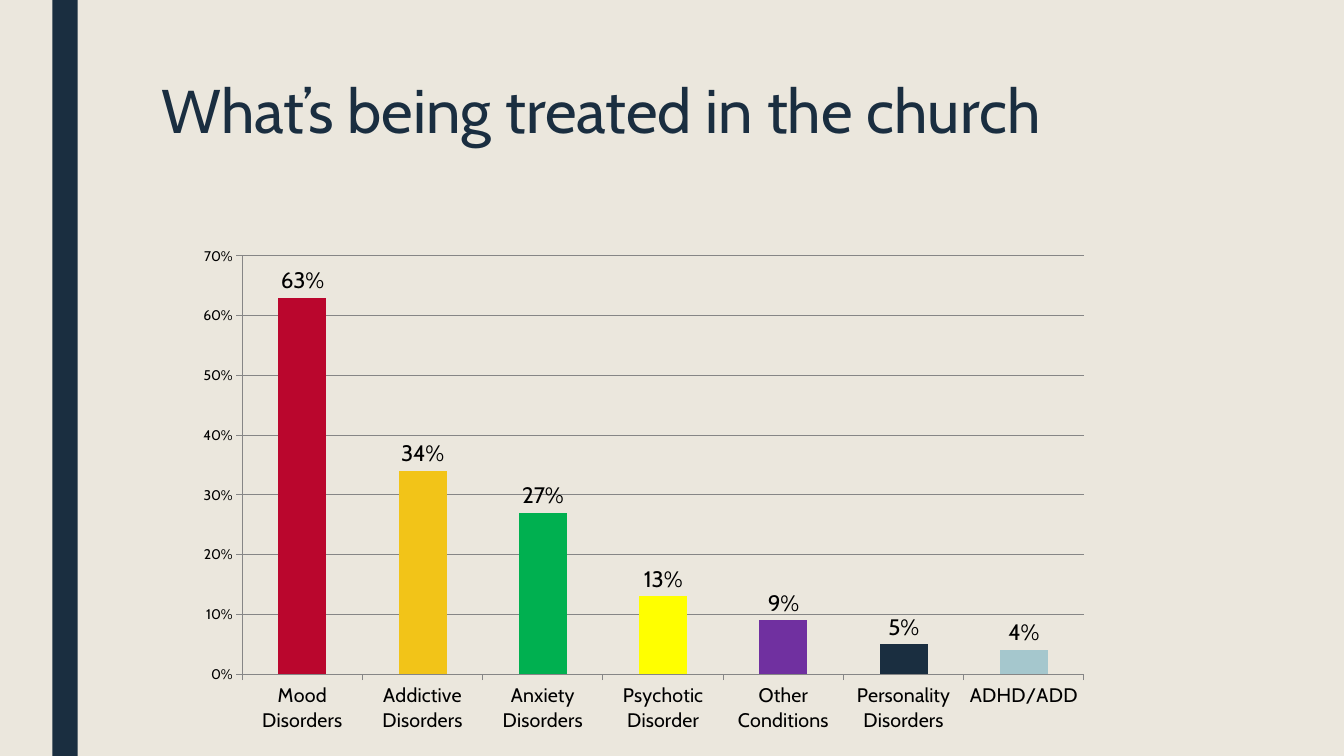
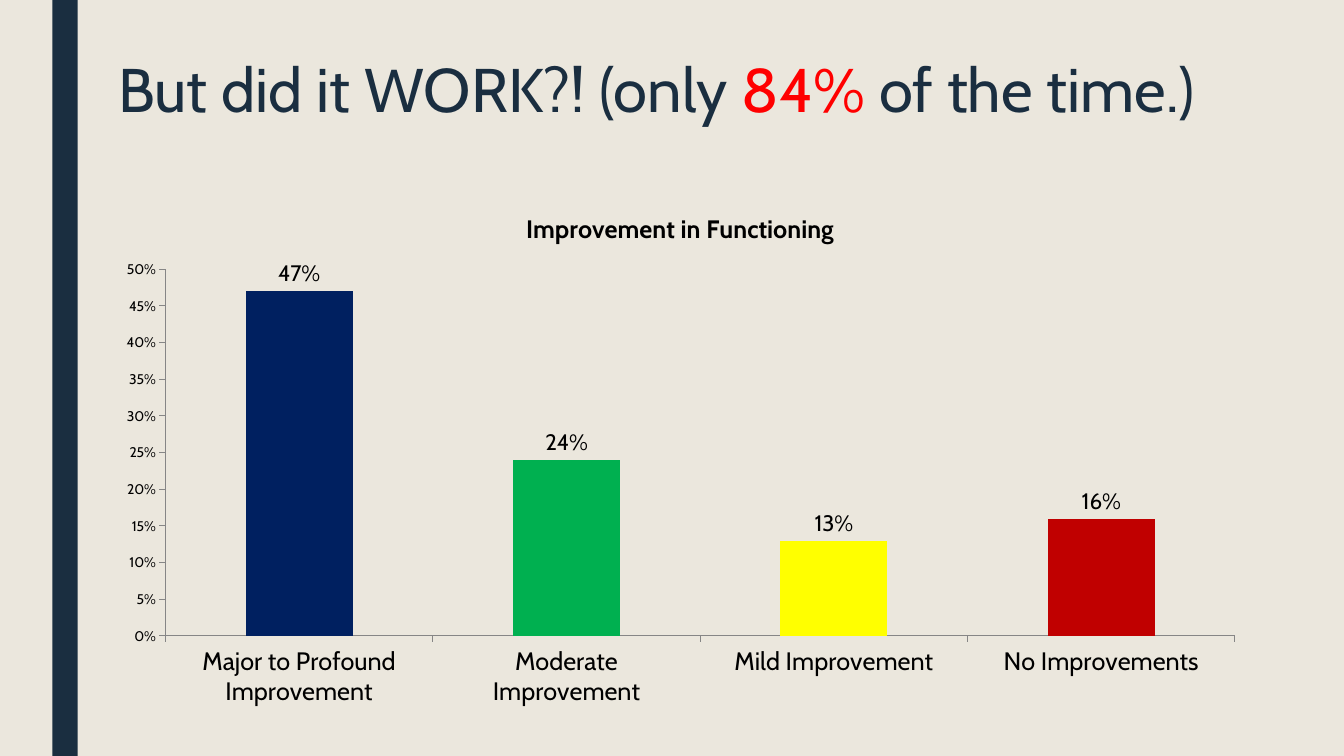
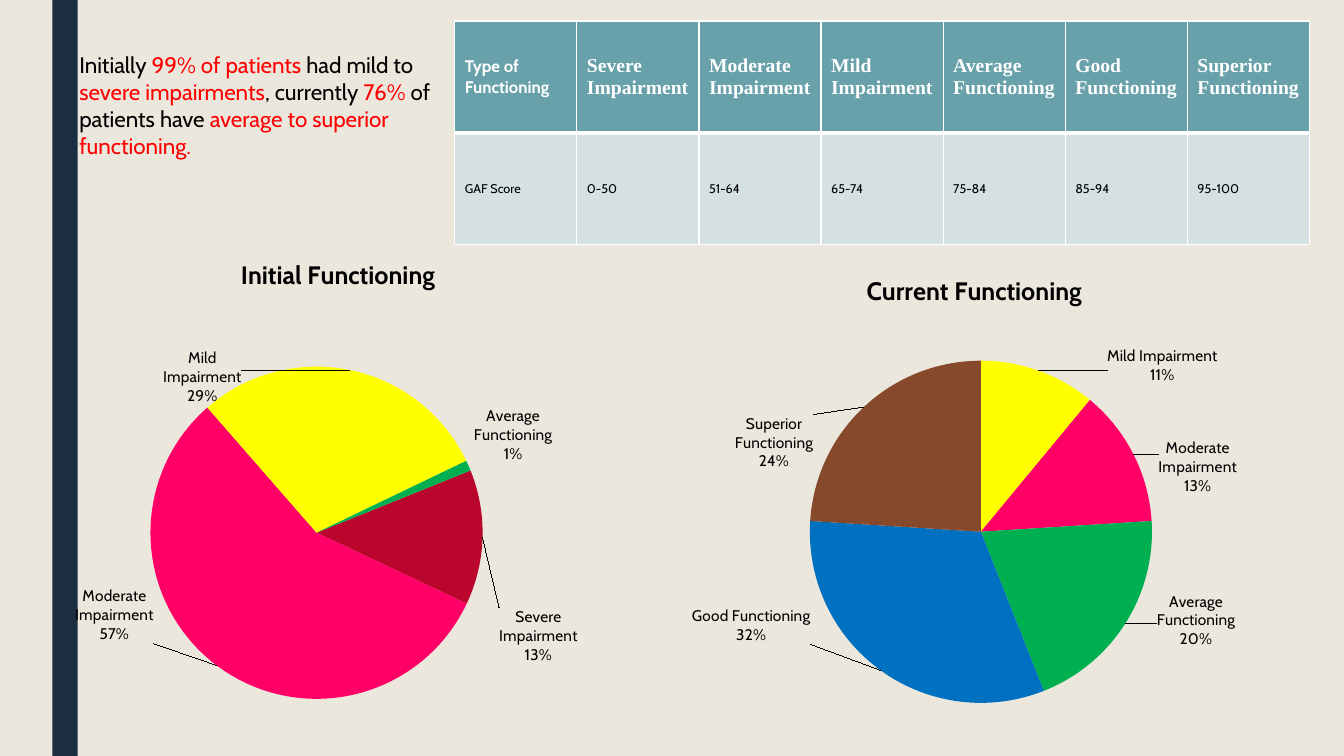
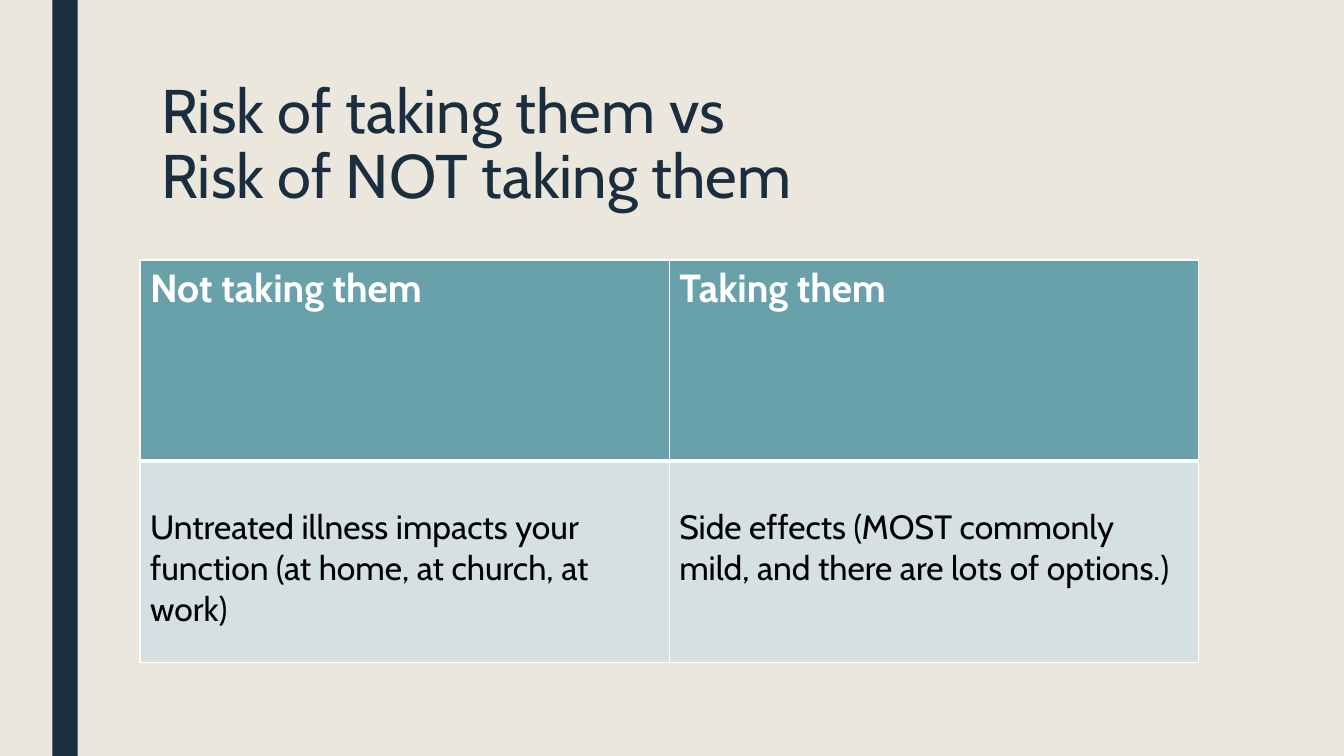
from copy import deepcopy
from dataclasses import dataclass

from lxml import etree
from pptx import Presentation
from pptx import util as u
from pptx.chart import data as cd
from pptx.dml.color import RGBColor
from pptx.enum import chart as ch, shapes, text
from pptx.oxml import parse_xml
from pptx.oxml.ns import nsdecls, qn


@dataclass(frozen=True)
class Theme:
    font: str = "Cabin"
    serif: str = "Times New Roman"
    paper: str = "EBE7DD"
    navy: str = "1A2E40"
    teal: str = "69A1AB"
    pale: str = "D4E0E2"
    white: str = "FFFFFF"
    black: str = "000000"
    red: str = "FF0000"
    axis: str = "868686"
    crimson: str = "BA062D"
    pink: str = "FF0066"
    yellow: str = "FFFF00"
    green: str = "00B050"
    title: int = 44
    heading: int = 18
    body: int = 16
    pie_label: int = 11
    chart: int = 10


T = Theme()


def rgb(color):
    return RGBColor.from_string(color)


def box(*lengths):
    return [u.Cm(n) for n in lengths]


def style(font, size=T.body, color=T.black, bold=False, name=T.font):
    font.size, font.bold, font.name = u.Pt(size), bold, name
    font.color.rgb = rgb(color)


def write(p, txt, **fmt):
    for i, line in enumerate(txt.split("\n")):
        if i:
            p.add_line_break()
        r = p.add_run()
        r.text = line
        style(r.font, **fmt)


def write_marked(p, parts, color, **fmt):
    for i, part in enumerate(parts):
        write(p, part, color=T.red if i % 2 else color, **fmt)


def set_master(prs, s):
    master = prs.slide_master
    master.background.fill.solid()
    master.background.fill.fore_color.rgb = rgb(T.paper)
    band = s.shapes.add_shape(shapes.MSO_SHAPE.RECTANGLE, *box(1.32, 0, 0.64, 19.05))
    band.shadow.inherit = False
    band.fill.solid()
    band.fill.fore_color.rgb = rgb(T.navy)
    band.line.fill.background()
    master.shapes.element.insert(2, band.element)


def add_title(s, parts, at=(3.81, 1.9, 26.67, 4.11)):
    sp = s.shapes.title
    sp.left, sp.top, sp.width, sp.height = box(*at)
    tf = sp.text_frame
    tf.word_wrap = True
    tf.auto_size = text.MSO_AUTO_SIZE.NONE
    tf.vertical_anchor = text.MSO_ANCHOR.TOP
    p = tf.paragraphs[0]
    p.alignment = text.PP_ALIGN.LEFT
    p.line_spacing = 0.89
    write_marked(p, parts, T.navy, size=T.title)


def manual_layout(x, y, w=None, h=None):
    target = '<c:layoutTarget val="inner"/><c:xMode val="edge"/><c:yMode val="edge"/>' if w else ""
    size = f'<c:w val="{w}"/><c:h val="{h}"/>' if w else ""
    return parse_xml(
        f'<c:layout {nsdecls("c")}><c:manualLayout>{target}'
        f'<c:x val="{x}"/><c:y val="{y}"/>{size}</c:manualLayout></c:layout>')


def add_chart(s, kind, at, points, plot_at, title=None, fmt="General"):
    data = cd.CategoryChartData(number_format=fmt)
    data.categories = [name for name, _, _ in points]
    data.add_series("Series 1", [value for _, value, _ in points])
    chart = s.shapes.add_chart(kind, *box(*at), data).chart
    style(chart.font, size=T.chart)
    chart.has_legend = False
    chart.has_title = bool(title)
    if title:
        write(chart.chart_title.text_frame.paragraphs[0], title, size=T.heading, bold=True)
    plot = chart.plots[0]
    plot.vary_by_categories = False
    for i, (_, _, color) in enumerate(points):
        fill = plot.series[0].points[i].format.fill
        fill.solid()
        fill.fore_color.rgb = rgb(color)
    area = chart.element.xpath(".//c:plotArea")[0]
    for old in area.findall(qn("c:layout")):
        area.remove(old)
    area.insert(0, manual_layout(*plot_at))
    return chart


def label_series(chart, size):
    labels = chart.plots[0].series[0].data_labels
    style(labels.font, size=size)
    labels.number_format = "0%"
    labels.number_format_is_linked = False
    labels.position = ch.XL_LABEL_POSITION.OUTSIDE_END
    return labels


def add_columns(s, at, points, plot_at, top, step, cat_size, grid=False, title=None):
    chart = add_chart(s, ch.XL_CHART_TYPE.COLUMN_CLUSTERED, at, points, plot_at, title, "0%")
    chart.plots[0].gap_width = 150
    label_series(chart, T.body).show_value = True
    cat, val = chart.category_axis, chart.value_axis
    val.minimum_scale, val.maximum_scale, val.major_unit = 0, top, step
    val.has_major_gridlines = grid
    val.tick_labels.number_format = "0%"
    val.tick_labels.number_format_is_linked = False
    lines = [cat.format.line, val.format.line]
    if grid:
        lines.append(val.major_gridlines.format.line)
    for line in lines:
        line.color.rgb = rgb(T.axis)
        line.width = u.Pt(0.75)
    for axis, size in ((cat, cat_size), (val, T.chart)):
        axis.major_tick_mark = ch.XL_TICK_MARK.OUTSIDE
        style(axis.tick_labels.font, size=size)


def add_pie(s, at, points, plot_at, title, offsets, start=0):
    chart = add_chart(s, ch.XL_CHART_TYPE.PIE, at, points, plot_at, title)
    labels = label_series(chart, T.pie_label)
    labels.show_value = False
    labels.show_category_name = labels.show_percentage = True
    pie = chart.element.xpath(".//c:pieChart")[0]
    angle = etree.SubElement(pie, qn("c:firstSliceAng"))
    angle.set("val", str(start))
    group = chart.element.xpath(".//c:ser/c:dLbls")[0]
    separator = parse_xml(f'<c:separator {nsdecls("c")}>\n</c:separator>')
    group.find(qn("c:showBubbleSize")).addnext(separator)
    shared = [e for e in group if e.tag != qn("c:showLeaderLines")]
    for i, offset in enumerate(offsets):
        label = parse_xml(f'<c:dLbl {nsdecls("c")}><c:idx val="{i}"/></c:dLbl>')
        label.append(manual_layout(*offset))
        label.extend([deepcopy(e) for e in shared])
        group.insert(i, label)


def set_borders(cell, widths):
    tc_pr = cell._tc.get_or_add_tcPr()
    for i, (side, width) in enumerate(zip("LRTB", widths)):
        tc_pr.insert(i, parse_xml(
            f'<a:ln{side} {nsdecls("a")} w="{u.Pt(width)}"><a:solidFill>'
            f'<a:srgbClr val="{T.white}"/></a:solidFill></a:ln{side}>'))


def add_table(s, at, rows, formats, anchor=text.MSO_ANCHOR.TOP, body_top=0.13):
    table = s.shapes.add_table(len(rows), len(rows[0]), *box(*at)).table
    table.horz_banding = False
    for i, row in enumerate(rows):
        for j, txt in enumerate(row):
            cell = table.cell(i, j)
            cell.fill.solid()
            cell.fill.fore_color.rgb = rgb(T.pale if i else T.teal)
            cell.vertical_anchor = anchor
            if i:
                cell.margin_top = u.Cm(body_top)
            set_borders(cell, (1, 1, 3, 1) if i else (1, 1, 1, 3))
            write(cell.text_frame.paragraphs[0], txt, **formats(i, j))


def treated_slide(s):
    add_title(s, ["What’s being treated in the church"])
    add_columns(s, (4.72, 5.94, 23.06, 12.7), [
        ("Mood Disorders", 0.63, T.crimson),
        ("Addictive Disorders", 0.34, "F2C418"),
        ("Anxiety Disorders", 0.27, T.green),
        ("Psychotic Disorder", 0.13, T.yellow),
        ("Other Conditions", 0.09, "7030A0"),
        ("Personality Disorders", 0.05, T.navy),
        ("ADHD/ADD", 0.04, "A5C7CD"),
    ], (0.06, 0.04, 0.92, 0.83), top=0.7, step=0.1, cat_size=14, grid=True)


def outcome_slide(s):
    add_title(s, ["But did it WORK?! (only ", "84%", " of the time.)"], (2.72, 1.37, 30.12, 4.34))
    add_columns(s, (2.72, 4.8, 28.98, 13.21), [
        ("Major to Profound Improvement", 0.47, "002060"),
        ("Moderate Improvement", 0.24, T.green),
        ("Mild Improvement", 0.13, T.yellow),
        ("No Improvements", 0.16, "C00000"),
    ], (0.05, 0.15, 0.93, 0.7), top=0.5, step=0.05, cat_size=T.heading,
        title="Improvement in Functioning ")


def functioning_format(i, j):
    if i:
        return dict(size=9)
    if j:
        return dict(size=14, color=T.white, bold=True, name=T.serif)
    return dict(size=12, color=T.white, bold=True)


def functioning_slide(s):
    add_pie(s, (1.75, 5.97, 13.54, 13.08), [
        ("Severe Impairment", 13, T.crimson),
        ("Moderate Impairment", 56, T.pink),
        ("Mild Impairment", 29, T.yellow),
        ("Average Functioning", 1, T.green),
    ], (0.15, 0.25, 0.62, 0.64), "Initial Functioning",
        [(0.02, 0.19), (-0.11, -0.16), (-0.35, 0.08)], start=68)
    add_pie(s, (16.21, 6.38, 16.69, 12.32), [
        ("Mild Impairment", 11, T.yellow),
        ("Moderate Impairment", 13, T.pink),
        ("Average Functioning", 20, T.green),
        ("Good Functioning", 32, "0070C0"),
        ("Superior Functioning", 24, "87492C"),
    ], (0.25, 0.22, 0.52, 0.7), "Current Functioning",
        [(0.1, 0.04), (0.03, 0.09), (0.04, -0.07), (-0.1, -0.14), (-0.07, 0.14)])
    add_table(s, (11.46, 0.53, 21.54, 5.64), [
        ["Type of Functioning", "Severe Impairment", "Moderate Impairment", "Mild Impairment",
         "Average Functioning", "Good Functioning", "Superior Functioning"],
        ["GAF Score", "0-50", "51-64", "65-74", "75-84", "85-94", "95-100"],
    ], functioning_format, anchor=text.MSO_ANCHOR.MIDDLE)
    tf = s.shapes.add_textbox(*box(1.75, 1.17, 10.36, 3)).text_frame
    tf.word_wrap = True
    tf.auto_size = text.MSO_AUTO_SIZE.SHAPE_TO_FIT_TEXT
    write_marked(tf.paragraphs[0], [
        "Initially ", "99% of patients ", "had mild to ", "severe impairments",
        ", currently ", "76%", " of patients have ", "average to superior functioning.",
    ], T.black)


def risk_format(i, j):
    return dict(size=24) if i else dict(size=28, color=T.white, bold=True)


def risk_slide(s):
    add_title(s, ["Risk of taking them vs \nRisk of NOT taking them"])
    add_table(s, (3.53, 6.55, 26.67, 10.14), [
        ["Not taking them", "Taking them"],
        ["Untreated illness impacts your function (at home, at church, at work)",
         "Side effects (MOST commonly mild, and there are lots of options.)"],
    ], risk_format, body_top=1.17)


def main():
    prs = Presentation()
    prs.slide_width, prs.slide_height = box(33.87, 19.05)
    title_only, blank = prs.slide_layouts[5], prs.slide_layouts[6]
    builders = [(treated_slide, title_only), (outcome_slide, title_only),
                (functioning_slide, blank), (risk_slide, title_only)]
    for build, layout in builders:
        build(prs.slides.add_slide(layout))
    set_master(prs, prs.slides[0])
    prs.save("out.pptx")


if __name__ == "__main__":
    main()
